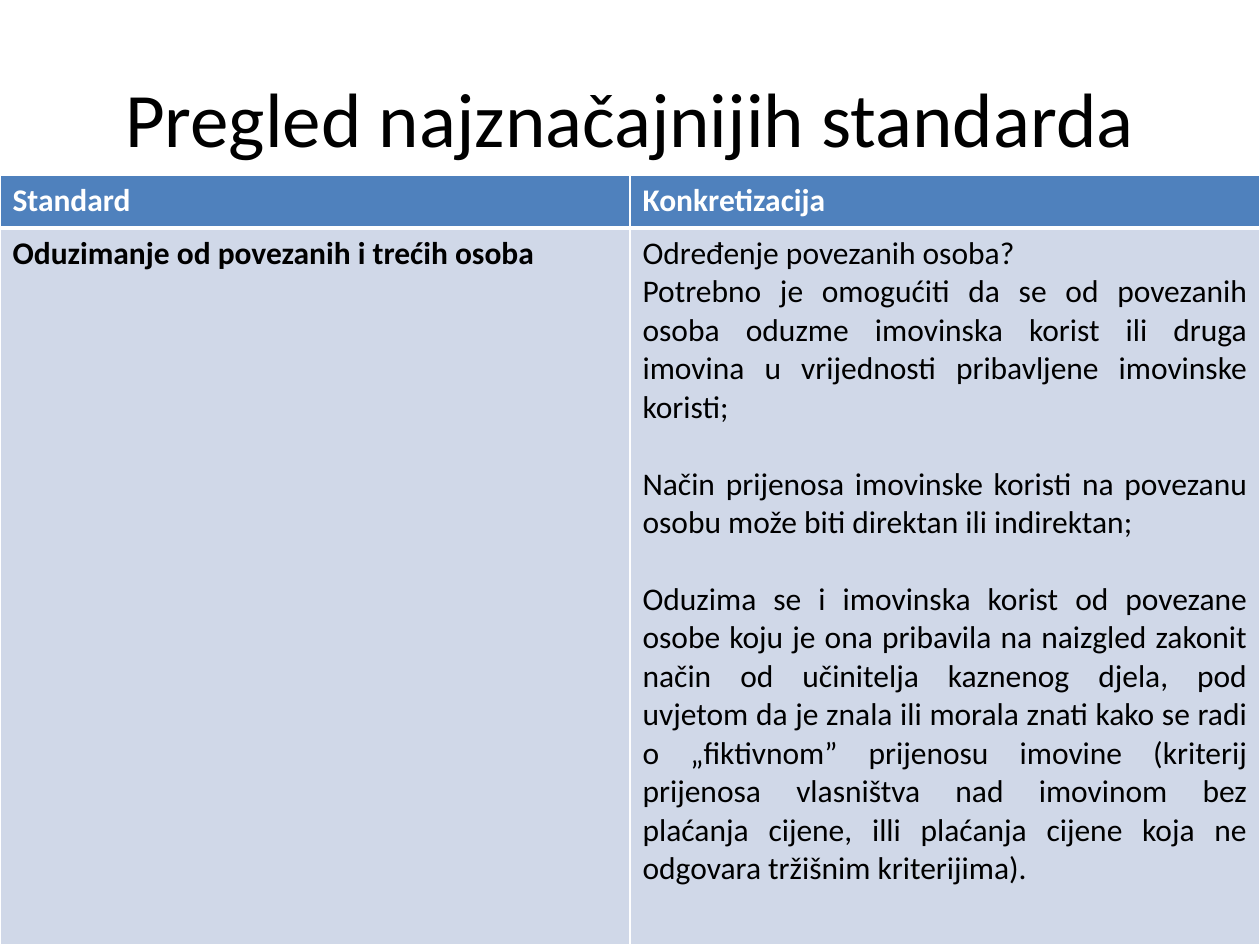
import pptx
import pptx.util
import pptx.dml.color
import pptx.enum.text
import pptx.oxml
import pptx.oxml.ns

Inches, Pt = pptx.util.Inches, pptx.util.Pt
RGBColor = pptx.dml.color.RGBColor
PP_ALIGN = pptx.enum.text.PP_ALIGN

BLACK = RGBColor(0x00, 0x00, 0x00)
WHITE = RGBColor(0xFF, 0xFF, 0xFF)
HEADER_BLUE = RGBColor(0x4F, 0x81, 0xBD)
BODY_BLUE = RGBColor(0xD0, 0xD8, 0xE8)

ROWS = [
    [["Standard"], ["Konkretizacija"]],
    [
        ["Oduzimanje od povezanih i trećih osoba"],
        [
            "Određenje povezanih osoba?",
            "Potrebno je omogućiti da se od povezanih osoba oduzme imovinska korist "
            "ili druga imovina u vrijednosti pribavljene imovinske koristi;",
            "Način prijenosa imovinske koristi na povezanu osobu može biti direktan "
            "ili indirektan;",
            "Oduzima se i imovinska korist od povezane osobe koju je ona pribavila na "
            "naizgled zakonit način od učinitelja kaznenog djela, pod uvjetom da je "
            "znala ili morala znati kako se radi o „fiktivnom” prijenosu imovine "
            "(kriterij prijenosa vlasništva nad imovinom bez plaćanja cijene, illi "
            "plaćanja cijene koja ne odgovara tržišnim kriterijima).",
        ],
    ],
]


def style_run(r, size, color, bold=False):
    r.font.name = "Calibri"
    r.font.size = Pt(size)
    r.font.color.rgb = color
    r.font.bold = bold


def set_borders(cell, widths):
    """Draw white cell borders; widths maps L, R, T and B to points."""
    tc_pr = cell._tc.get_or_add_tcPr()
    for i, (side, width) in enumerate(widths.items()):
        tc_pr.insert(i, pptx.oxml.parse_xml(
            f'<a:ln{side} {pptx.oxml.ns.nsdecls("a")} w="{Pt(width)}">'
            f'<a:solidFill><a:srgbClr val="{WHITE}"/></a:solidFill></a:ln{side}>'))


prs = pptx.Presentation()
prs.slide_width, prs.slide_height = Inches(10), Inches(7.5)
s = prs.slides.add_slide(prs.slide_layouts[6])

title = s.shapes.add_textbox(Inches(0.5), Inches(0.3), Inches(9), Inches(1.25))
tf = title.text_frame
tf.word_wrap = True
tf.vertical_anchor = pptx.enum.text.MSO_ANCHOR.MIDDLE
tf.text = "Pregled najznačajnijih standarda"
p = tf.paragraphs[0]
p.alignment = PP_ALIGN.CENTER
style_run(p.runs[0], 44, BLACK)

table = s.shapes.add_table(2, 2, Inches(0), Inches(1.39), Inches(10), Inches(6.11)).table
table.rows[0].height = Inches(0.42)
table.rows[1].height = Inches(5.69)

for row, contents in enumerate(ROWS):
    header = row == 0
    for col, paragraphs in enumerate(contents):
        cell = table.cell(row, col)
        cell.fill.solid()
        cell.fill.fore_color.rgb = HEADER_BLUE if header else BODY_BLUE
        set_borders(cell, {"L": 1, "R": 1, "T": 1 if header else 3, "B": 3 if header else 1})
        cell.text_frame.text = "\n".join(paragraphs)
        for i, p in enumerate(cell.text_frame.paragraphs):
            if i > 0:
                p.alignment = PP_ALIGN.JUSTIFY
            if i > 1:
                p.space_before = Pt(22)
            style_run(p.runs[0], 18, WHITE if header else BLACK, header or col == 0)

prs.save("out.pptx")
